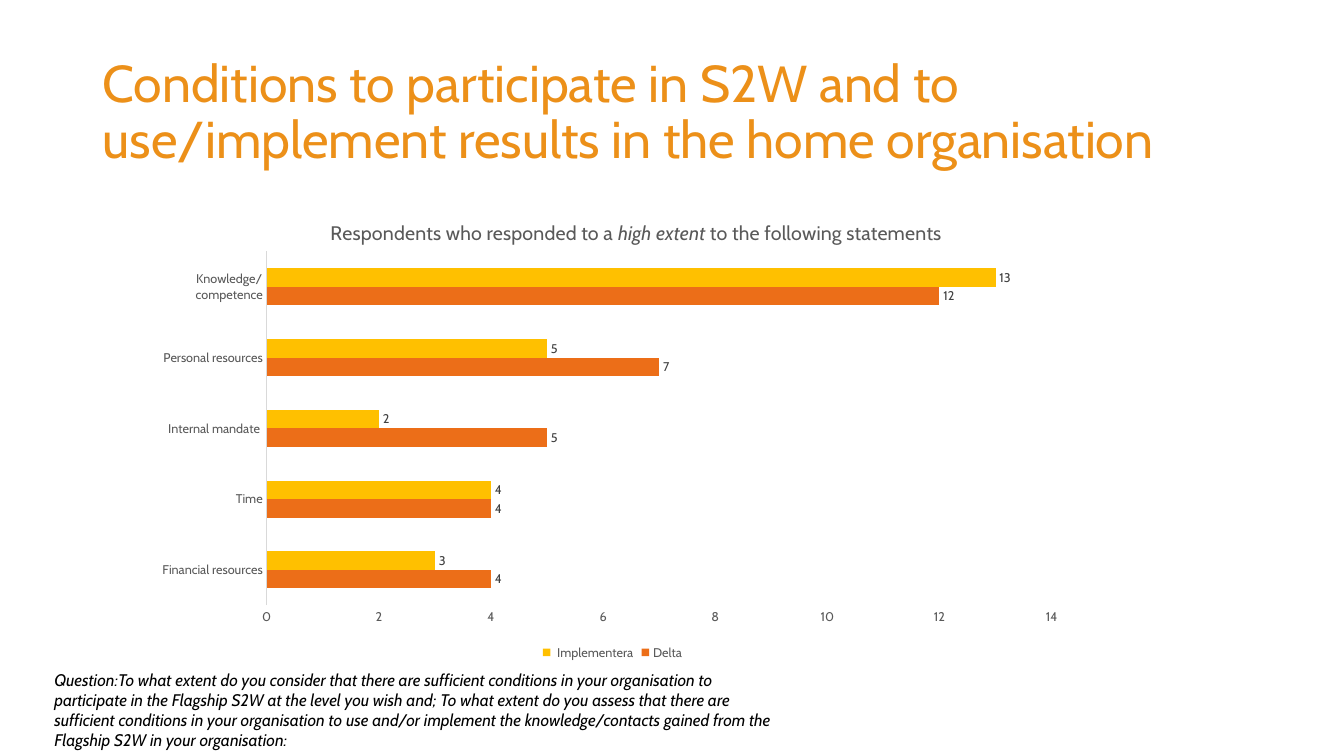
"""Build a slide with a title, a clustered bar chart and the survey question."""
from dataclasses import dataclass

from lxml.etree import SubElement
from pptx import Presentation
from pptx.chart.data import CategoryChartData
from pptx.dml.color import RGBColor
from pptx.enum.chart import XL_CHART_TYPE, XL_LABEL_POSITION, XL_LEGEND_POSITION, XL_TICK_MARK
from pptx.enum.text import MSO_ANCHOR
from pptx.oxml.ns import qn
from pptx.util import Cm, Pt


@dataclass(frozen=True)
class Theme:
    """Font, colours and type sizes of the slide."""

    font: str = "Cabin"
    heading: str = "EC9019"
    ink: str = "000000"
    muted: str = "595959"
    value: str = "404040"
    axis: str = "D9D9D9"
    heading_size: int = 37
    question_size: int = 12
    chart_title_size: int = 14
    label_size: int = 9


THEME = Theme()
HEADING = "Conditions to participate in S2W and to use/implement results in the home organisation"
QUESTION = (
    "Question:To what extent do you consider that there are sufficient conditions in your "
    "organisation to participate in the Flagship S2W at the level you wish and; To what extent "
    "do you assess that there are sufficient conditions in your organisation to use and/or "
    "implement the knowledge/contacts gained from the Flagship S2W in your organisation:"
)
CHART_TITLE = (
    ("Respondents who responded to a ", False),
    ("high extent", True),
    (" to the following statements", False),
)
CATEGORIES = (
    "Financial resources", "Time", "Internal mandate ", "Personal resources", "Knowledge/competence",
)
SERIES = (
    ("Delta", (4, 4, 5, 7, 12), "EC6E18"),
    (" Implementera", (3, 4, 2, 5, 13), "FFC000"),
)


def style_font(font, size, color):
    """Set the theme font with a size and a colour."""
    font.name = THEME.font
    font.size = Pt(size)
    font.bold = False
    font.color.rgb = RGBColor.from_string(color)


def add_text(slide, box, text, size, color, anchor=MSO_ANCHOR.TOP, italic=False, spacing=None):
    """Add a wrapped text box with one paragraph."""
    frame = slide.shapes.add_textbox(*map(Cm, box)).text_frame
    frame.word_wrap = True
    frame.vertical_anchor = anchor
    paragraph = frame.paragraphs[0]
    paragraph.text = text
    paragraph.line_spacing = spacing
    style_font(paragraph.font, size, color)
    paragraph.font.italic = italic


def set_layout(element, **settings):
    """Place a chart part by fractions of the chart area."""
    for old in element.findall(qn("c:layout")):
        element.remove(old)
    layout = element.makeelement(qn("c:layout"))
    manual = SubElement(layout, qn("c:manualLayout"))
    for name, value in settings.items():
        SubElement(manual, qn(f"c:{name}")).set("val", str(value))
    text = element.find(qn("c:tx"))
    element.insert(0 if text is None else 1, layout)


def add_chart_title(chart):
    """Write the chart title with its italic phrase."""
    title = chart.chart_title
    paragraph = title.text_frame.paragraphs[0]
    style_font(paragraph.font, THEME.chart_title_size, THEME.muted)
    for text, italic in CHART_TITLE:
        run = paragraph.add_run()
        run.text = text
        style_font(run.font, THEME.chart_title_size, THEME.muted)
        run.font.italic = italic
    title.include_in_layout = False
    set_layout(title._element, xMode="edge", yMode="edge", x=0.195, y=0.05)


def style_axis(axis):
    """Remove ticks and gridlines and style the axis labels."""
    axis.has_major_gridlines = False
    axis.major_tick_mark = axis.minor_tick_mark = XL_TICK_MARK.NONE
    style_font(axis.tick_labels.font, THEME.label_size, THEME.muted)


def style_series(series, color):
    """Colour the bars and show their values at the end."""
    series.format.fill.solid()
    series.format.fill.fore_color.rgb = RGBColor.from_string(color)
    labels = series.data_labels
    labels.show_value = True
    labels.position = XL_LABEL_POSITION.OUTSIDE_END
    style_font(labels.font, THEME.label_size, THEME.value)


def add_bar_chart(slide, box):
    """Add the clustered bar chart of responses."""
    data = CategoryChartData()
    data.categories = CATEGORIES
    for name, values, _ in SERIES:
        data.add_series(name, values)
    chart = slide.shapes.add_chart(XL_CHART_TYPE.BAR_CLUSTERED, *map(Cm, box), data).chart
    style_font(chart.font, 10, THEME.ink)
    add_chart_title(chart)

    style_axis(chart.category_axis)
    line = chart.category_axis.format.line
    line.color.rgb = RGBColor.from_string(THEME.axis)
    line.width = Pt(0.75)
    style_axis(chart.value_axis)
    chart.value_axis.format.line.fill.background()
    chart.value_axis.minimum_scale = 0
    chart.value_axis.maximum_scale = 14
    chart.value_axis.major_unit = 2

    plot = chart.plots[0]
    plot.gap_width = 182
    plot.vary_by_categories = False
    for series, (_, _, color) in zip(plot.series, SERIES):
        style_series(series, color)
    chart.has_legend = True
    chart.legend.position = XL_LEGEND_POSITION.BOTTOM
    chart.legend.include_in_layout = False
    style_font(chart.legend.font, THEME.label_size, THEME.muted)
    plot_area = chart._chartSpace.chart.plotArea
    set_layout(plot_area, layoutTarget="inner", xMode="edge", yMode="edge",
               x=0.13, y=0.125, w=0.84, h=0.75)


def main():
    """Build and save the slide."""
    presentation = Presentation()
    presentation.slide_width, presentation.slide_height = Cm(33.87), Cm(19.05)
    slide = presentation.slides.add_slide(presentation.slide_layouts[6])
    add_text(slide, (2.34, 1.02, 29.21, 3.68), HEADING, THEME.heading_size, THEME.heading,
             anchor=MSO_ANCHOR.MIDDLE, spacing=0.9)
    add_bar_chart(slide, (3.66, 4.85, 23.55, 11.89))
    add_text(slide, (1.12, 16.74, 19.02, 1.8), QUESTION, THEME.question_size, THEME.ink, italic=True)
    presentation.save("out.pptx")


if __name__ == "__main__":
    main()
